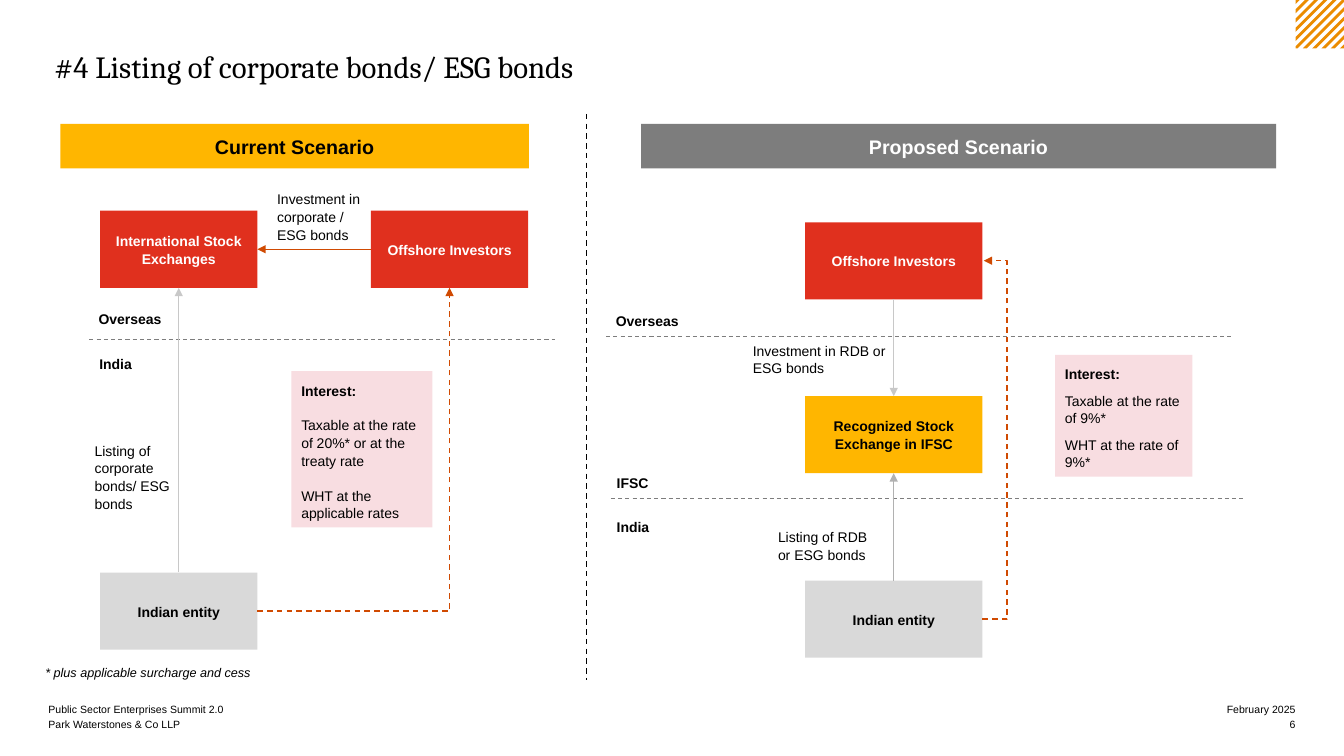
from dataclasses import dataclass

from lxml.etree import SubElement
from pptx import Presentation
from pptx.dml.color import RGBColor
from pptx.enum.dml import MSO_LINE
from pptx.enum.shapes import MSO_CONNECTOR, MSO_SHAPE
from pptx.enum.text import MSO_ANCHOR, MSO_AUTO_SIZE, PP_ALIGN
from pptx.oxml.ns import qn
from pptx.util import Inches, Pt

WIDTH, HEIGHT = 13.333, 7.5


@dataclass(frozen=True)
class Theme:
    body: str = "Arial"
    heading: str = "Cambria"
    black: str = "000000"
    white: str = "FFFFFF"
    red: str = "E0301E"
    yellow: str = "FFB600"
    pink: str = "F8DDE1"
    pale: str = "D9D9D9"
    grey: str = "7D7D7D"
    mid: str = "B1B1B1"
    light: str = "C8C8C8"
    orange: str = "D04A02"
    stripe: str = "EB8C00"
    title_pt: float = 22
    banner_pt: float = 14
    body_pt: float = 10
    note_pt: float = 9
    footer_pt: float = 7.5
    spacing: float = 1.06


T = Theme()


@dataclass(frozen=True)
class Area:
    """Rectangle in percent of the slide's width and height."""
    x: float
    y: float
    w: float
    h: float

    @property
    def right(self) -> float:
        return self.x + self.w

    @property
    def bottom(self) -> float:
        return self.y + self.h

    @property
    def cx(self) -> float:
        return self.x + self.w / 2

    @property
    def cy(self) -> float:
        return self.y + self.h / 2


@dataclass(frozen=True)
class Block:
    text: str
    area: Area
    fill: str
    color: str = T.black
    size: float = T.body_pt


@dataclass(frozen=True)
class Label:
    text: str
    area: Area
    bold: bool = False


@dataclass(frozen=True)
class Line:
    x1: float
    y1: float
    x2: float
    y2: float
    color: str
    width: float = 1
    dash: bool = False
    arrow: bool = True
    bend: float | None = None  # x of the elbow's vertical run


def px(share: float) -> int:
    return Inches(WIDTH * share / 100)


def py(share: float) -> int:
    return Inches(HEIGHT * share / 100)


def frame(a: Area) -> tuple[int, int, int, int]:
    return px(a.x), py(a.y), px(a.w), py(a.h)


def write(tf, text: str, *, size: float = T.body_pt, color: str = T.black, font: str = T.body,
          bold: bool = False, italic: bool = False, bold_first: bool = False,
          align=PP_ALIGN.LEFT, anchor=MSO_ANCHOR.TOP, inset: float | None = None,
          gap: float = 0, spacing: float = 1) -> None:
    tf.word_wrap, tf.auto_size, tf.vertical_anchor = True, MSO_AUTO_SIZE.NONE, anchor
    if inset is not None:
        tf.margin_left = tf.margin_right = tf.margin_top = tf.margin_bottom = Inches(inset)
    for i, line in enumerate(text.split("\n")):
        p = tf.add_paragraph() if i else tf.paragraphs[0]
        p.alignment, p.line_spacing = align, spacing
        p.space_before = Pt(gap if i else 0)
        r = p.add_run()
        r.text = line
        f = r.font
        f.name, f.size, f.italic = font, Pt(size), italic
        f.bold = bold or (bold_first and i == 0)
        f.color.rgb = RGBColor.from_string(color)


def paint(sp, fill: str) -> None:
    sp.shadow.inherit = False
    sp.fill.solid()
    sp.fill.fore_color.rgb = RGBColor.from_string(fill)
    sp.line.fill.background()


def add_block(s, a: Area, fill: str, text: str, **fmt) -> None:
    sp = s.shapes.add_shape(MSO_SHAPE.RECTANGLE, *frame(a))
    paint(sp, fill)
    write(sp.text_frame, text, spacing=T.spacing, **fmt)


def add_text(s, a: Area, text: str, **fmt) -> None:
    write(s.shapes.add_textbox(*frame(a)).text_frame, text, **fmt)


def add_line(s, ln: Line) -> None:
    kind = MSO_CONNECTOR.STRAIGHT if ln.bend is None else MSO_CONNECTOR.ELBOW
    c = s.shapes.add_connector(kind, px(ln.x1), py(ln.y1), px(ln.x2), py(ln.y2))
    c.line.color.rgb, c.line.width = RGBColor.from_string(ln.color), Pt(ln.width)
    if ln.dash:
        c.line.dash_style = MSO_LINE.DASH
    sp_pr = c._element.spPr
    if ln.arrow:
        SubElement(sp_pr.find(qn("a:ln")), qn("a:tailEnd"), type="triangle")
    SubElement(sp_pr, qn("a:effectLst"))
    if ln.bend is not None:
        geom = sp_pr.find(qn("a:prstGeom"))
        if ln.bend == ln.x2:
            geom.set("prst", "bentConnector2")
        else:
            ratio = round((ln.bend - ln.x1) / (ln.x2 - ln.x1) * 100000)
            SubElement(geom.find(qn("a:avLst")), qn("a:gd"), name="adj1", fmla=f"val {ratio}")


def add_stripes(s, side: float = 0.48, band: float = 0.04, count: int = 11) -> None:
    """Diagonal bands filling a square in the top right corner."""
    left, step = WIDTH - side, (2 * side - band) / (count - 1)
    for i in range(count):
        a = i * step
        b = a + band
        sums = [a, side, b] if a < side < b else [a, b]
        upper = [(min(t, side), max(0, t - side)) for t in sums]
        lower = [(v, u) for u, v in reversed(upper)]
        points = [(Inches(left + u), Inches(v)) for u, v in upper + lower]
        fb = s.shapes.build_freeform(*points[0])
        fb.add_line_segments(points[1:], close=True)
        paint(fb.convert_to_shape(), T.stripe)


# Boxes of the two flows
LEFT_W, RIGHT_X, RIGHT_W, BOX_H = 11.7, 59.9, 13.2, 10.2
exchange = Area(7.45, 27.87, LEFT_W, BOX_H)
investors = Area(27.6, 27.87, LEFT_W, BOX_H)
entity = Area(7.45, 75.73, LEFT_W, BOX_H)
new_investors, ifsc, new_entity = (Area(RIGHT_X, y, RIGHT_W, BOX_H) for y in (29.4, 52.4, 76.8))

BLOCKS = [
    Block("Current Scenario", Area(4.5, 16.4, 34.85, 5.87), T.yellow, size=T.banner_pt),
    Block("Proposed Scenario", Area(47.7, 16.4, 47.25, 5.87), T.grey, T.white, T.banner_pt),
    Block("International Stock Exchanges", exchange, T.red, T.white),
    Block("Offshore Investors", investors, T.red, T.white),
    Block("Indian entity", entity, T.pale),
    Block("Offshore Investors", new_investors, T.red, T.white),
    Block("Recognized Stock Exchange in IFSC", ifsc, T.yellow),
    Block("Indian entity", new_entity, T.pale),
]
LABELS = [
    Label("Overseas", Area(6.6, 39.6, 7.95, 4.93), True),
    Label("India", Area(6.65, 45.6, 7.95, 4.93), True),
    Label("Overseas", Area(45.08, 39.87, 7.95, 4.93), True),
    Label("IFSC", Area(45.15, 61.33, 7.95, 4.93), True),
    Label("India", Area(45.15, 67.2, 7.95, 4.93), True),
    Label("Investment in corporate / ESG bonds", Area(19.88, 23.87, 8.5, 9.47)),
    Label("Listing of corporate bonds/ ESG bonds", Area(6.3, 57.2, 7.75, 11.73)),
    Label("Investment in RDB or ESG bonds", Area(55.28, 43.87, 12, 7.2)),
    Label("Listing of RDB or ESG bonds", Area(57.15, 68.53, 9.15, 7.2)),
]
LINES = [
    # Divider and borders
    Line(43.65, 15.07, 43.65, 90, T.black, dash=True, arrow=False),
    Line(6.65, 44.9, 41.3, 44.9, T.grey, 0.75, True, False),
    Line(45.1, 44.5, 91.8, 44.5, T.grey, 0.75, True, False),
    Line(45.45, 65.95, 92.63, 65.95, T.grey, 0.75, True, False),
    # Listing and investment
    Line(entity.cx, entity.y, exchange.cx, exchange.bottom, T.light),
    Line(investors.x, investors.cy, exchange.right, exchange.cy, T.orange),
    Line(new_entity.cx, new_entity.y, ifsc.cx, ifsc.bottom, T.mid, 0.75),
    Line(new_investors.cx, new_investors.bottom, ifsc.cx, ifsc.y, T.light),
    # Interest
    Line(entity.right, entity.cy, investors.cx, investors.bottom, T.orange, dash=True,
         bend=investors.cx),
    Line(new_entity.right, new_entity.cy, new_investors.right + 0.1, new_investors.cy, T.orange,
         dash=True, bend=74.93),
]


def main() -> None:
    prs = Presentation()
    prs.slide_width, prs.slide_height = Inches(WIDTH), Inches(HEIGHT)
    s = prs.slides.add_slide(prs.slide_layouts[5])
    add_stripes(s)

    # Title
    title = s.shapes.title
    title.left, title.top, title.width, title.height = frame(Area(4.05, 6.27, 92.7, 17.07))
    write(title.text_frame, "#4 Listing of corporate bonds/ ESG bonds", size=T.title_pt,
          font=T.heading, inset=0)

    # Flows
    for b in BLOCKS:
        add_block(s, b.area, b.fill, b.text, size=b.size, color=b.color, bold=True,
                  align=PP_ALIGN.CENTER, anchor=MSO_ANCHOR.MIDDLE)
    for ln in LINES:
        add_line(s, ln)
    for lb in LABELS:
        add_text(s, lb.area, lb.text, bold=lb.bold, anchor=MSO_ANCHOR.MIDDLE, inset=0.1,
                 spacing=T.spacing)

    # Interest notes
    for area, gap, text in (
        (Area(21.68, 49.1, 10.5, 20.67), 12, "Interest:\nTaxable at the rate of 20%* or at the "
         "treaty rate\nWHT at the applicable rates"),
        (Area(78.5, 46.93, 10.23, 16.13), 6, "Interest:\nTaxable at the rate of 9%*\n"
         "WHT at the rate of 9%*"),
    ):
        add_block(s, area, T.pink, text, bold_first=True, inset=0.1, gap=gap)

    # Footnote and footer
    add_text(s, Area(2.63, 87.33, 50, 5.33), "* plus applicable surcharge and cess",
             size=T.note_pt, italic=True)
    for y, left, right in ((92.67, "Public Sector Enterprises Summit 2.0", "February 2025"),
                           (94.67, "Park Waterstones & Co LLP", "6")):
        for x, w, text, align in ((3.6, 44.9, left, PP_ALIGN.LEFT),
                                  (81.9, 14.5, right, PP_ALIGN.RIGHT)):
            add_text(s, Area(x, y, w, 2), text, size=T.footer_pt, align=align,
                     anchor=MSO_ANCHOR.BOTTOM, inset=0)
    prs.save("out.pptx")


if __name__ == "__main__":
    main()
